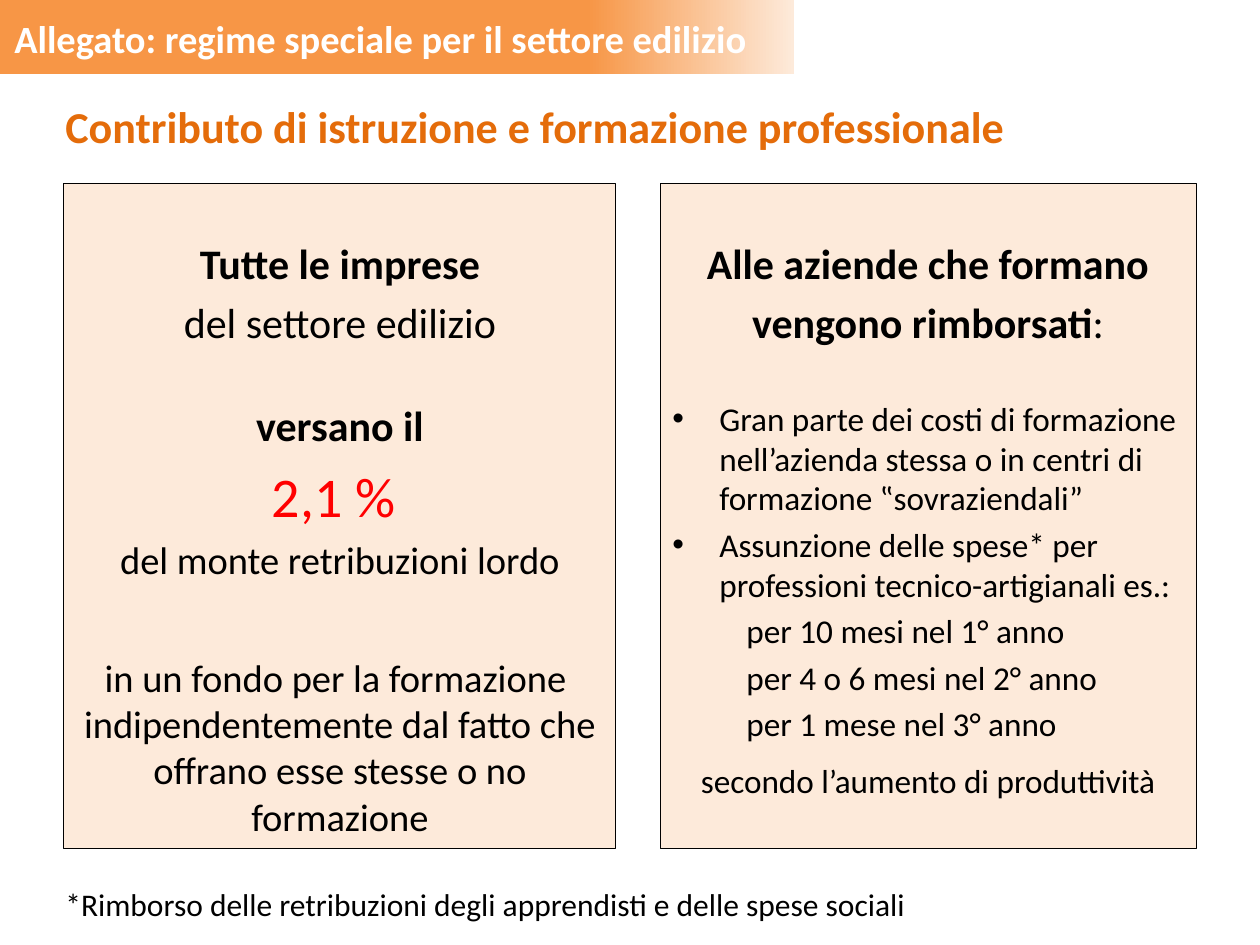
from dataclasses import dataclass
from lxml import etree
from pptx import Presentation
from pptx.dml.color import RGBColor
from pptx.enum.shapes import MSO_SHAPE
from pptx.enum.text import MSO_ANCHOR, PP_ALIGN
from pptx.oxml.ns import qn
from pptx.util import Emu, Pt

RECT = MSO_SHAPE.RECTANGLE
TOP, MIDDLE = MSO_ANCHOR.TOP, MSO_ANCHOR.MIDDLE
LEFT, CENTER = PP_ALIGN.LEFT, PP_ALIGN.CENTER

COLORS = {
    "orange": "F79646",
    "peach": "FDEADA",
    "title": "E46C0A",
    "black": "000000",
    "white": "FFFFFF",
    "red": "FF0000",
}
FONT = "Calibri"
HANG = 47
STEP = 74


@dataclass
class Box:
    x: int
    y: int
    w: int
    h: int


@dataclass
class Para:
    text: str
    size: float
    bold: bool = False
    color: str = "black"
    align: PP_ALIGN = CENTER
    before: float = 0
    indent: int = 0
    bullet: bool = False
    tail: str = ""  # closing run, never bold


def px(n: int) -> Emu:
    return Emu(round(n * 914400 / 126))


def rgb(name: str) -> RGBColor:
    return RGBColor.from_string(COLORS[name])


def indent(par, item: Para) -> None:
    """Set the left indent and, for a list item, the hanging bullet."""
    props = par._p.get_or_add_pPr()
    props.set("marL", str(px(item.indent)))
    if item.bullet:
        props.set("indent", str(-px(item.indent)))
        etree.SubElement(props, qn("a:buFont"), typeface="Arial")
        etree.SubElement(props, qn("a:buChar"), char="•")


def write(shape, items: list[Para], anchor=TOP) -> None:
    frame = shape.text_frame
    frame.word_wrap = True
    frame.vertical_anchor = anchor
    for i, item in enumerate(items):
        par = frame.add_paragraph() if i else frame.paragraphs[0]
        par.alignment = item.align
        if item.before:
            par.space_before = Pt(item.before)
        if item.indent:
            indent(par, item)
        font = par.font
        font.name, font.size = FONT, Pt(item.size)
        font.color.rgb = rgb(item.color)
        par.text = item.text
        if item.tail:
            par.runs[0].font.bold = item.bold
            par.add_run().text = item.tail
        else:
            font.bold = item.bold


def label(slide, box: Box, item: Para, anchor=TOP) -> None:
    shape = slide.shapes.add_textbox(px(box.x), px(box.y), px(box.w), px(box.h))
    write(shape, [item], anchor)


def block(slide, box: Box):
    shape = slide.shapes.add_shape(RECT, px(box.x), px(box.y), px(box.w), px(box.h))
    shape.shadow.inherit = False
    return shape


def banner(slide, box: Box) -> None:
    shape = block(slide, box)
    shape.line.fill.background()
    shape.fill.gradient()
    shape.fill.gradient_angle = 0
    stops = zip(shape.fill.gradient_stops, (0.74, 1), ("orange", "peach"))
    for stop, place, color in stops:
        stop.position = place
        stop.color.rgb = rgb(color)


def panel(slide, box: Box, items: list[Para]) -> None:
    shape = block(slide, box)
    shape.fill.solid()
    shape.fill.fore_color.rgb = rgb("peach")
    shape.line.color.rgb = rgb("black")
    shape.line.width = Pt(0.5)
    shape.text_frame.margin_top = px(54)
    write(shape, items)


FIRMS = [
    Para("Tutte le imprese", 24, bold=True),
    Para("del settore edilizio", 24, before=4.8),
    Para("versano il", 24, bold=True, before=30),
    Para("2,1 % ", 32, color="red", before=6.4),
    Para("del monte retribuzioni lordo", 22, before=4.4),
    Para("in un fondo per la formazione \vindipendentemente dal fatto che "
         "offrano esse stesse o no formazione", 22, before=41),
]
COSTS = [
    "Gran parte dei costi di formazione nell’azienda stessa o in centri di "
    "formazione ‟sovraziendali”",
    "Assunzione delle spese* per professioni tecnico-artigianali es.:",
]
TERMS = ["per 10 mesi nel 1° anno", "per 4 o 6 mesi nel 2° anno", "per 1 mese nel 3° anno"]
REFUND = [
    Para("Alle aziende che formano", 24, bold=True),
    Para("vengono rimborsati", 24, bold=True, before=4.8, tail=":"),
    *(Para(text, 19, align=LEFT, before=gap, indent=HANG, bullet=True)
      for text, gap in zip(COSTS, (29, 3.8))),
    *(Para(text, 19, align=LEFT, before=3.8, indent=STEP) for text in TERMS),
    Para("secondo l’aumento di produttività", 19, before=9.8),
]


def main() -> None:
    deck = Presentation()
    deck.slide_width, deck.slide_height = px(1260), px(945)
    slide = deck.slides.add_slide(deck.slide_layouts[6])
    banner(slide, Box(0, 0, 794, 74))
    label(slide, Box(53, 82, 974, 88),
          Para("Contributo di istruzione e formazione professionale", 25.2,
               bold=True, color="title", align=LEFT), MIDDLE)
    panel(slide, Box(64, 184, 552, 665), FIRMS)
    panel(slide, Box(660, 184, 536, 665), REFUND)
    label(slide, Box(2, 9, 827, 59),
          Para("Allegato: regime speciale per il settore edilizio", 22,
               bold=True, color="white", align=LEFT))
    label(slide, Box(53, 879, 1081, 50),
          Para("*Rimborso delle retribuzioni degli apprendisti e delle spese sociali",
               18, align=LEFT))
    deck.save("out.pptx")


if __name__ == "__main__":
    main()
